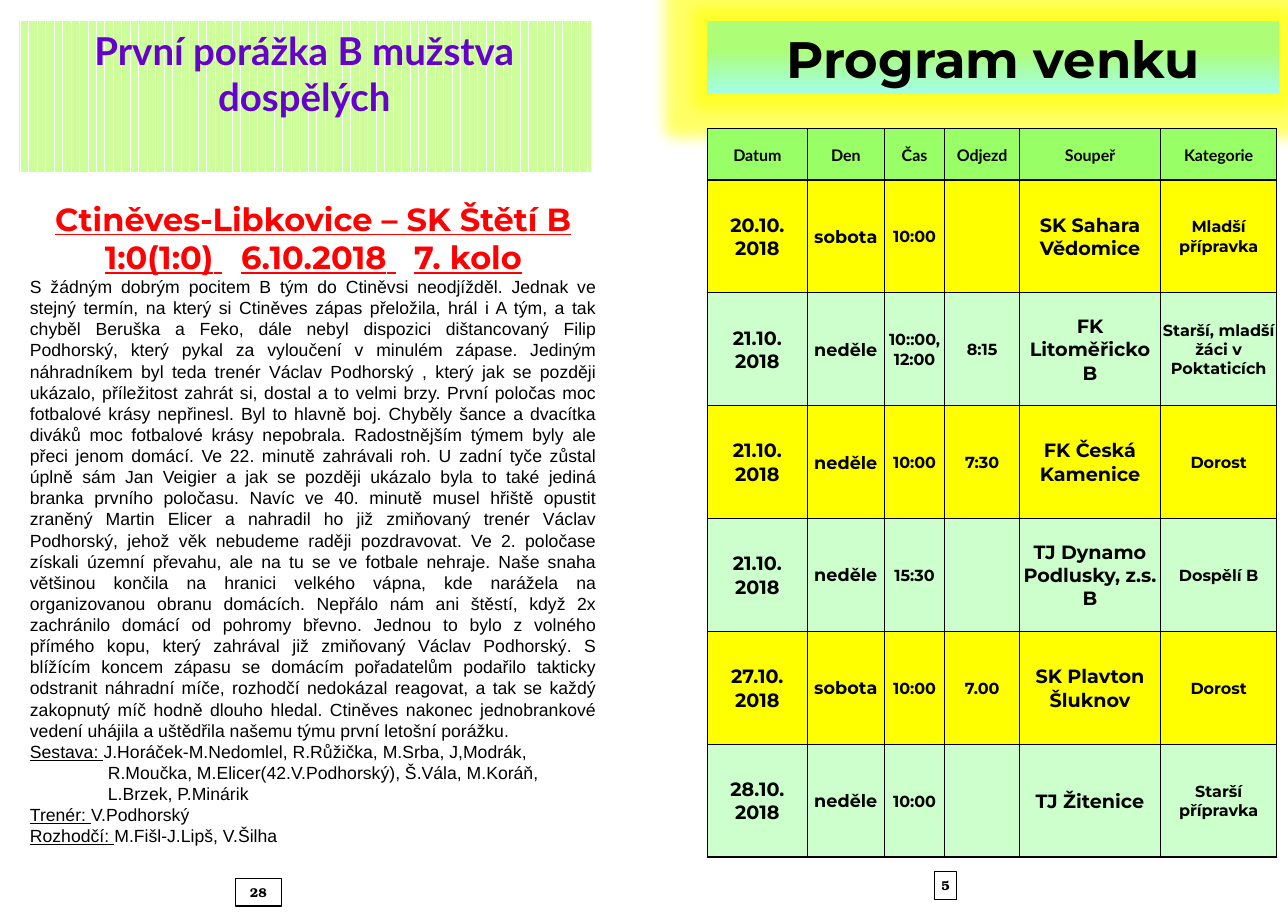
from pptx import Presentation
from pptx.dml.color import RGBColor
from pptx.enum.dml import MSO_PATTERN as Pat
from pptx.enum.shapes import MSO_SHAPE as Geo
from pptx.enum.text import MSO_ANCHOR as Anc, MSO_AUTO_SIZE as Fit, PP_ALIGN as Al
from pptx.oxml import parse_xml
from pptx.oxml.ns import nsdecls, qn
from pptx.util import Cm, Pt

BLACK = RGBColor(0, 0, 0)
WHITE = RGBColor(255, 255, 255)
RED = RGBColor(255, 0, 0)
PURPLE = RGBColor(0x66, 0, 0xCC)
LIME = RGBColor(0xCC, 0xFF, 0x99)
GREEN = RGBColor(0x99, 0xFF, 0x66)
MINT = RGBColor(0xCC, 0xFF, 0xCC)
YELLOW = RGBColor(0xFF, 0xFF, 0)
GRASS = RGBColor(0xAD, 0xFD, 0x77)
AQUA = RGBColor(0xA3, 0xFF, 0xE8)

STORY = " ".join((
    "S žádným dobrým pocitem B tým do Ctiněvsi neodjížděl. Jednak ve stejný termín, na který si",
    "Ctiněves zápas přeložila, hrál i A tým, a tak chyběl Beruška a Feko, dále nebyl dispozici",
    "dištancovaný Filip Podhorský, který pykal za vyloučení v minulém zápase. Jediným náhradníkem",
    "byl teda trenér Václav Podhorský , který jak se později ukázalo, příležitost zahrát si, dostal",
    "a to velmi brzy. První poločas moc fotbalové krásy nepřinesl. Byl to hlavně boj. Chyběly šance",
    "a dvacítka diváků moc fotbalové krásy nepobrala. Radostnějším týmem byly ale přeci jenom",
    "domácí. Ve 22. minutě zahrávali roh. U zadní tyče zůstal úplně sám Jan Veigier a jak se",
    "později ukázalo byla to také jediná branka prvního poločasu. Navíc ve 40. minutě musel hřiště",
    "opustit zraněný Martin Elicer a nahradil ho již zmiňovaný trenér Václav Podhorský, jehož věk",
    "nebudeme raději pozdravovat. Ve 2. poločase získali územní převahu, ale na tu se ve fotbale",
    "nehraje. Naše snaha většinou končila na hranici velkého vápna, kde narážela na organizovanou",
    "obranu domácích. Nepřálo nám ani štěstí, když 2x zachránilo domácí od pohromy břevno. Jednou",
    "to bylo z volného přímého kopu, který zahrával již zmiňovaný Václav Podhorský. S blížícím",
    "koncem zápasu se domácím pořadatelům podařilo takticky odstranit náhradní míče, rozhodčí",
    "nedokázal reagovat, a tak se každý zakopnutý míč hodně dlouho hledal. Ctiněves nakonec",
    "jednobrankové vedení uhájila a uštědřila našemu týmu první letošní porážku.",
))
SCORE = ("1:0(1:0)", " ", "6.10.2018", " ", "7. kolo")
CREW = (
    ("Sestava: ", "J.Horáček-M.Nedomlel, R.Růžička, M.Srba, J,Modrák,"),
    ("", "R.Moučka, M.Elicer(42.V.Podhorský), Š.Vála, M.Koráň,"),
    ("", "L.Brzek, P.Minárik"),
    ("Trenér: ", "V.Podhorský"),
    ("Rozhodčí: ", "M.Fišl-J.Lipš, V.Šilha"),
)
HEADS = ("Datum", "Den", "Čas", "Odjezd", "Soupeř", "Kategorie")
GAMES = (
    ("20.10.\n2018", "sobota", "10:00", "", "SK Sahara Vědomice", "Mladší přípravka"),
    ("21.10.\n2018", "neděle", "10::00, 12:00", "8:15", "FK Litoměřicko B",
     "Starší, mladší žáci v Poktaticích"),
    ("21.10.\n2018", "neděle", "10:00", "7:30", "FK Česká Kamenice", "Dorost"),
    ("21.10.\n2018", "neděle", "15:30", "", "TJ Dynamo Podlusky, z.s. B", "Dospělí B"),
    ("27.10.\n2018", "sobota", "10:00", "7.00", "SK Plavton Šluknov", "Dorost"),
    ("28.10.\n2018", "neděle", "10:00", "", "TJ Žitenice", "Starší přípravka"),
)
WIDTHS = (2.2, 1.7, 1.33, 1.65, 3.11, 2.56)
SIZES = (12, 11, 10, 10, 12, 10)


def style(run, face, size, color=BLACK, bold=True, line=False):
    """Format one run."""
    font = run.font
    font.name, font.size, font.bold, font.underline = face, Pt(size), bold, line
    font.color.rgb = color


def dress(frame, face, size, color=BLACK):
    """Centre a frame's paragraphs and format their runs."""
    for para in frame.paragraphs:
        para.alignment = Al.CENTER
        for run in para.runs:
            style(run, face, size, color)


def title(slide, box):
    """Place the striped headline."""
    head = slide.shapes.title
    head.left, head.top, head.width, head.height = map(Cm, box)
    head.fill.patterned()
    head.fill.pattern = Pat.DARK_VERTICAL
    head.fill.fore_color.rgb, head.fill.back_color.rgb = LIME, WHITE
    frame = head.text_frame
    frame.text = "První porážka B mužstva dospělých"
    frame.auto_size, frame.vertical_anchor = Fit.NONE, Anc.TOP
    dress(frame, "Lato", 24, PURPLE)


def report(slide, box):
    """Write the match report with its red heading and crew."""
    frame = slide.shapes.add_textbox(*map(Cm, box)).text_frame
    frame.word_wrap = True
    top = frame.paragraphs[0]
    top.text = "Ctiněves-Libkovice – SK Štětí B"
    score = frame.add_paragraph()
    for part in SCORE:
        run = score.add_run()
        run.text = part
        if part == " ":
            run.font._element.set("spc", "1150")
    for para in (top, score):
        para.alignment = Al.CENTER
        for run in para.runs:
            style(run, "Montserrat", 20, RED, line=True)
    for label, text in (("", STORY),) + CREW:
        para = frame.add_paragraph()
        para.line_spacing = Pt(13.2)
        para.alignment = Al.JUSTIFY if text == STORY else Al.LEFT
        if not label and text != STORY:
            para._p.get_or_add_pPr().set("marL", str(Cm(1.72)))
        for part in filter(None, (label, text)):
            run = para.add_run()
            run.text = part
            style(run, "Arial", 11, bold=False, line=part == label)


def banner(slide, box):
    """Draw the glowing gradient banner."""
    shape = slide.shapes.add_shape(Geo.RECTANGLE, *map(Cm, box))
    shape.shadow.inherit = False
    shape.line.fill.background()
    shape.fill.gradient()
    shape.fill.gradient_angle = 270
    for stop, color, pos in zip(shape.fill.gradient_stops, (GRASS, AQUA), (0.4, 1)):
        stop.color.rgb, stop.position = color, pos
    shape._element.spPr.find(qn("a:effectLst")).append(parse_xml(
        f'<a:glow {nsdecls("a")} rad="{Cm(0.64)}"><a:srgbClr val="{YELLOW}">'
        '<a:alpha val="60000"/></a:srgbClr></a:glow>'))
    shape.text_frame.text = "Program venku"
    dress(shape.text_frame, "Montserrat", 32)


def edge(cell, sides):
    """Draw the cell's borders from a map of side to width."""
    props = cell._tc.get_or_add_tcPr()
    for i, (side, width) in enumerate(sides.items()):
        props.insert(i, parse_xml(
            f'<a:ln{side} {nsdecls("a")} w="{Pt(width)}"><a:solidFill>'
            f'<a:srgbClr val="{BLACK}"/></a:solidFill></a:ln{side}>'))


def games(slide, box):
    """Build the table of away games."""
    rows = (HEADS,) + GAMES
    table = slide.shapes.add_table(len(rows), len(HEADS), *map(Cm, box)).table
    for col, width in zip(table.columns, WIDTHS):
        col.width = Cm(width)
    for r, row in enumerate(rows):
        table.rows[r].height = Cm(2.49 if r else 1.13)
        for c, text in enumerate(row):
            cell = table.cell(r, c)
            cell.fill.solid()
            cell.fill.fore_color.rgb = (YELLOW if r % 2 else MINT) if r else GREEN
            cell.margin_left = cell.margin_right = cell.margin_top = Cm(0.03)
            cell.margin_bottom = 0
            cell.vertical_anchor = Anc.MIDDLE
            cell.text_frame.text = text
            dress(cell.text_frame, *(("Montserrat", SIZES[c]) if r else ("Lato", 10)))
            edge(cell, {
                "L": 0.5 if c else 1,
                "R": 1 if c == len(HEADS) - 1 else 0.5,
                "T": 1 if r < 2 else 0.5,
                "B": 1 if r in (0, len(GAMES)) else 0.5,
            })


def folio(slide, box, text):
    """Draw a framed page number."""
    shape = slide.shapes.add_shape(Geo.RECTANGLE, *map(Cm, box))
    shape.shadow.inherit = False
    shape.fill.background()
    shape.line.color.rgb, shape.line.width = BLACK, Pt(0.75)
    frame = shape.text_frame
    frame.margin_left = frame.margin_right = 0
    frame.text = text
    dress(frame, "TeX Gyre Bonum", 8)


def main():
    """Build and save the spread."""
    deck = Presentation()
    deck.slide_width, deck.slide_height = Cm(28.4), Cm(20.12)
    slide = deck.slides.add_slide(deck.slide_layouts[5])
    title(slide, (0.41, 0.46, 12.6, 3.33))
    report(slide, (0.41, 4.27, 13, 14.66))
    banner(slide, (15.6, 0.46, 12.6, 1.62))
    games(slide, (15.6, 2.84, sum(WIDTHS), 16.07))
    folio(slide, (5.2, 19.38, 1, 0.61), "28")
    folio(slide, (20.6, 19.23, 0.5, 0.61), "5")
    deck.save("out.pptx")


if __name__ == "__main__":
    main()
